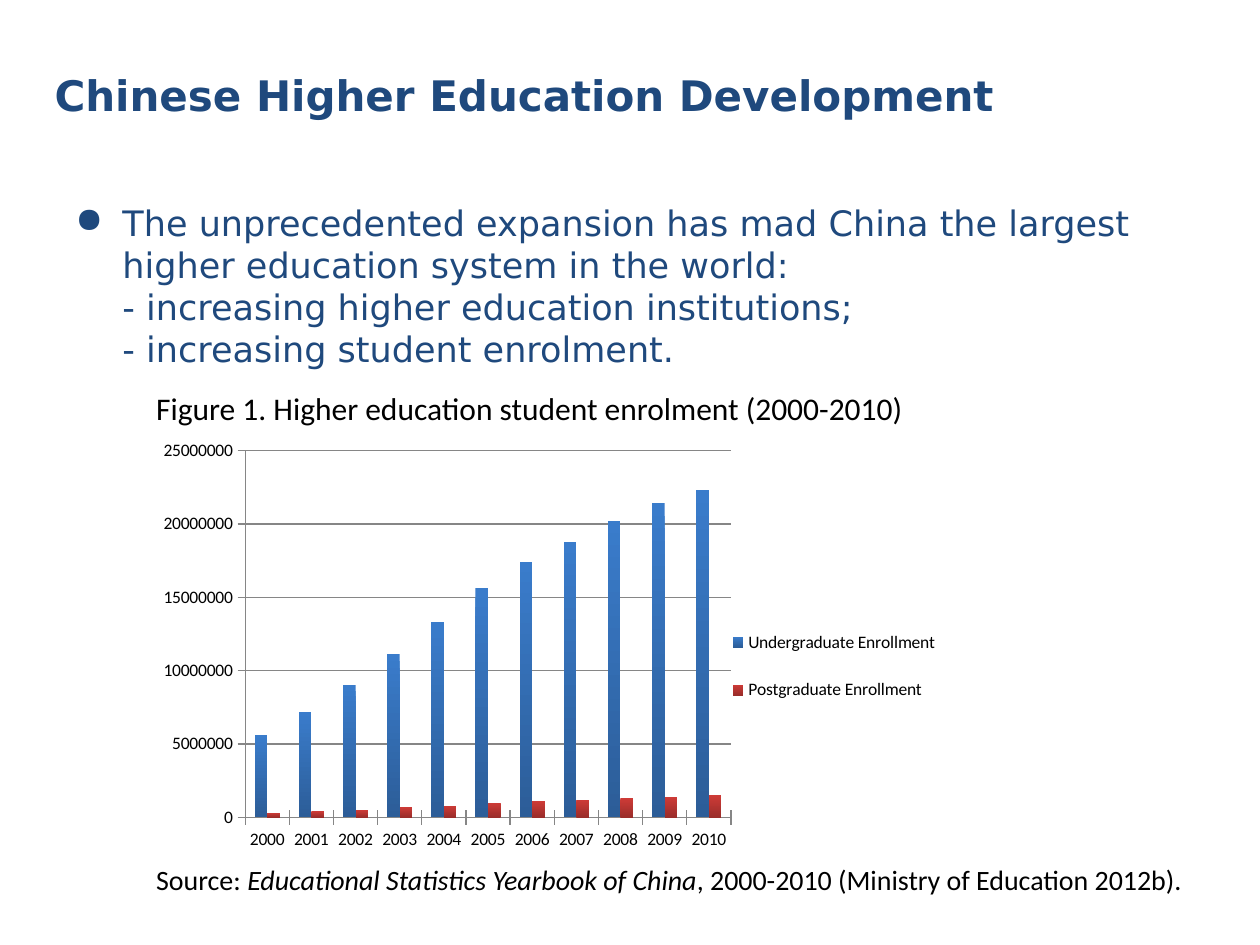
from lxml import etree
from pptx import Presentation
from pptx import util as u
from pptx.chart.data import CategoryChartData
from pptx.dml.color import RGBColor
from pptx.enum import chart as ch
from pptx.enum import text
from pptx.oxml import parse_xml
from pptx.oxml.ns import nsdecls, qn

NAVY = RGBColor(0x1F, 0x49, 0x7D)
BLACK = RGBColor(0, 0, 0)
GREY = RGBColor(0x86, 0x86, 0x86)
BLUES = RGBColor(0x3A, 0x7C, 0xCB), RGBColor(0x2C, 0x5D, 0x98)
REDS = RGBColor(0xCE, 0x3B, 0x37), RGBColor(0x9B, 0x2D, 0x2A)

YEARS = [str(year) for year in range(2000, 2011)]
ENROLLMENT = [
    ("Undergraduate Enrollment", BLUES,
     [5600000, 7200000, 9000000, 11100000, 13300000, 15600000,
      17400000, 18800000, 20200000, 21400000, 22300000]),
    ("Postgraduate Enrollment", REDS,
     [300000, 400000, 500000, 700000, 800000, 1000000,
      1100000, 1200000, 1300000, 1400000, 1500000]),
]


def add_text(slide, box, parts, size, font="Calibri", color=BLACK, bold=False,
             anchor=text.MSO_ANCHOR.MIDDLE):
    """Add a one-paragraph text box from (text, italic) parts and return the paragraph."""
    tf = slide.shapes.add_textbox(*map(u.Cm, box)).text_frame
    tf.word_wrap = True
    tf.vertical_anchor = anchor
    p = tf.paragraphs[0]
    for content, italic in parts:
        for i, line in enumerate(content.split("\n")):
            if i:
                p.add_line_break()
            r = p.add_run()
            r.text = line
            r.font.name, r.font.size = font, u.Pt(size)
            r.font.bold, r.font.italic = bold, italic
            r.font.color.rgb = color
    return p


def add_title(slide, box):
    """Place the slide heading."""
    add_text(slide, box, [("Chinese Higher Education Development", False)],
             24, font="DejaVu Sans", color=NAVY, bold=True)


def add_body(slide, box):
    """Place the bulleted statement."""
    statement = ("The unprecedented expansion has mad China the largest "
                 "higher education system in the world:\n"
                 "- increasing higher education institutions;\n"
                 "- increasing student enrolment.")
    p = add_text(slide, box, [(statement, False)], 20, font="DejaVu Sans",
                 color=NAVY, anchor=text.MSO_ANCHOR.TOP)
    props = p._p.get_or_add_pPr()
    props.set("marL", str(u.Cm(0.95)))
    props.set("indent", str(u.Cm(-0.95)))
    etree.SubElement(props, qn("a:buChar")).set("char", "●")


def set_layout(element, x, y, w, h, inner=False):
    """Fix a chart part at fractions of the chart area."""
    target = '<c:layoutTarget val="inner"/>' if inner else ""
    sizes = "".join(f'<c:{k} val="{v}"/>' for k, v in zip("xywh", (x, y, w, h)))
    layout = parse_xml(
        f'<c:layout {nsdecls("c")}><c:manualLayout>{target}<c:xMode val="edge"/>'
        f'<c:yMode val="edge"/>{sizes}</c:manualLayout></c:layout>')
    for old in element.findall(qn("c:layout")):
        element.remove(old)
    position = element.find(qn("c:legendPos"))
    if position is None:
        element.insert(0, layout)
    else:
        position.addnext(layout)


def style_axis(axis):
    """Give an axis grey lines and crossing ticks."""
    axis.format.line.color.rgb = GREY
    axis.format.line.width = u.Pt(0.75)
    axis.major_tick_mark = ch.XL_TICK_MARK.CROSS
    axis.minor_tick_mark = ch.XL_TICK_MARK.NONE


def add_enrolment_chart(slide, box):
    """Place the clustered columns of student enrolment."""
    data = CategoryChartData(number_format="General")
    data.categories = YEARS
    for name, _, values in ENROLLMENT:
        data.add_series(name, values)
    chart = slide.shapes.add_chart(
        ch.XL_CHART_TYPE.COLUMN_CLUSTERED, *map(u.Cm, box), data).chart
    chart.has_title = False
    chart.font.name, chart.font.size = "Calibri", u.Pt(10)
    chart.font.color.rgb = BLACK

    plot = chart.plots[0]
    plot.vary_by_categories = False
    plot.gap_width, plot.overlap = 150, 0
    for series, (_, colors, _) in zip(plot.series, ENROLLMENT):
        fill = series.format.fill
        fill.gradient()
        fill.gradient_angle = 270
        for stop, color in zip(fill.gradient_stops, colors):
            stop.color.rgb = color

    style_axis(chart.category_axis)
    axis = chart.value_axis
    style_axis(axis)
    axis.minimum_scale, axis.maximum_scale, axis.major_unit = 0, 25000000, 5000000
    axis.has_major_gridlines = True
    axis.major_gridlines.format.line.color.rgb = GREY
    axis.major_gridlines.format.line.width = u.Pt(0.75)

    chart.has_legend = True
    chart.legend.position = ch.XL_LEGEND_POSITION.RIGHT
    chart.legend.include_in_layout = False
    set_layout(chart.legend._element, 0.68, 0.4, 0.31, 0.29)
    set_layout(plot._element.getparent(), 0.12, 0.04, 0.59, 0.86, inner=True)


def add_caption(slide, box):
    """Place the figure caption."""
    add_text(slide, box,
             [("Figure 1. Higher education student enrolment (2000-2010)", False)], 18)


def add_source(slide, box):
    """Place the source line under the chart."""
    add_text(slide, box, [("Source: ", False),
                          ("Educational Statistics Yearbook of China", True),
                          (", 2000-2010 (Ministry of Education 2012b).", False)], 16)


def main():
    """Build and save the slide."""
    prs = Presentation()
    prs.slide_width, prs.slide_height = u.Cm(25.4), u.Cm(19.05)
    slide = prs.slides.add_slide(prs.slide_layouts[6])
    add_title(slide, (0.85, 0.64, 23.7, 2.54))
    add_body(slide, (1.27, 3.94, 22.86, 13.41))
    add_enrolment_chart(slide, (2.95, 8.74, 16.6, 8.6))
    add_source(slide, (2.9, 17.25, 22, 0.94))
    add_caption(slide, (2.9, 7.72, 20.02, 1.02))
    prs.save("out.pptx")


if __name__ == "__main__":
    main()
